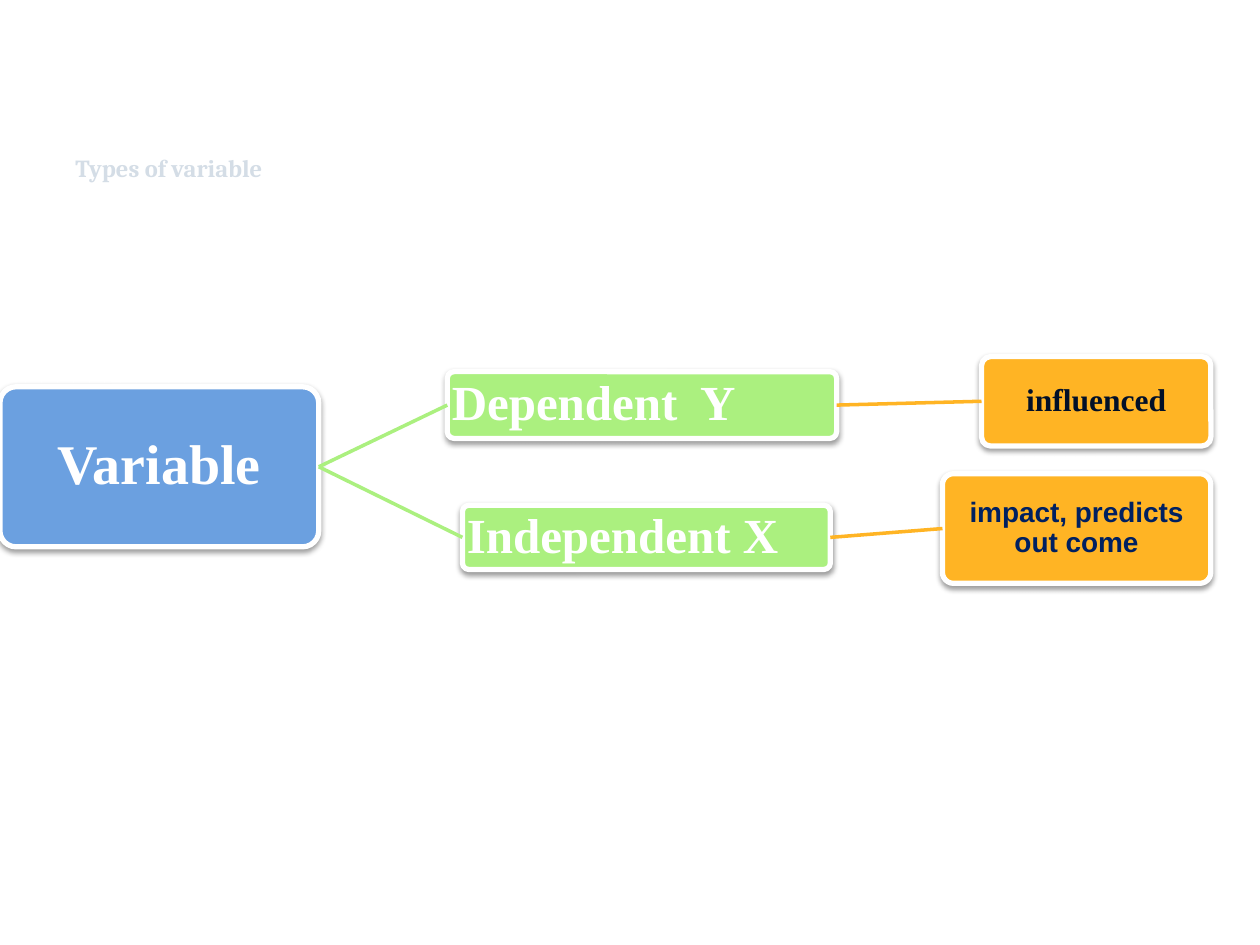
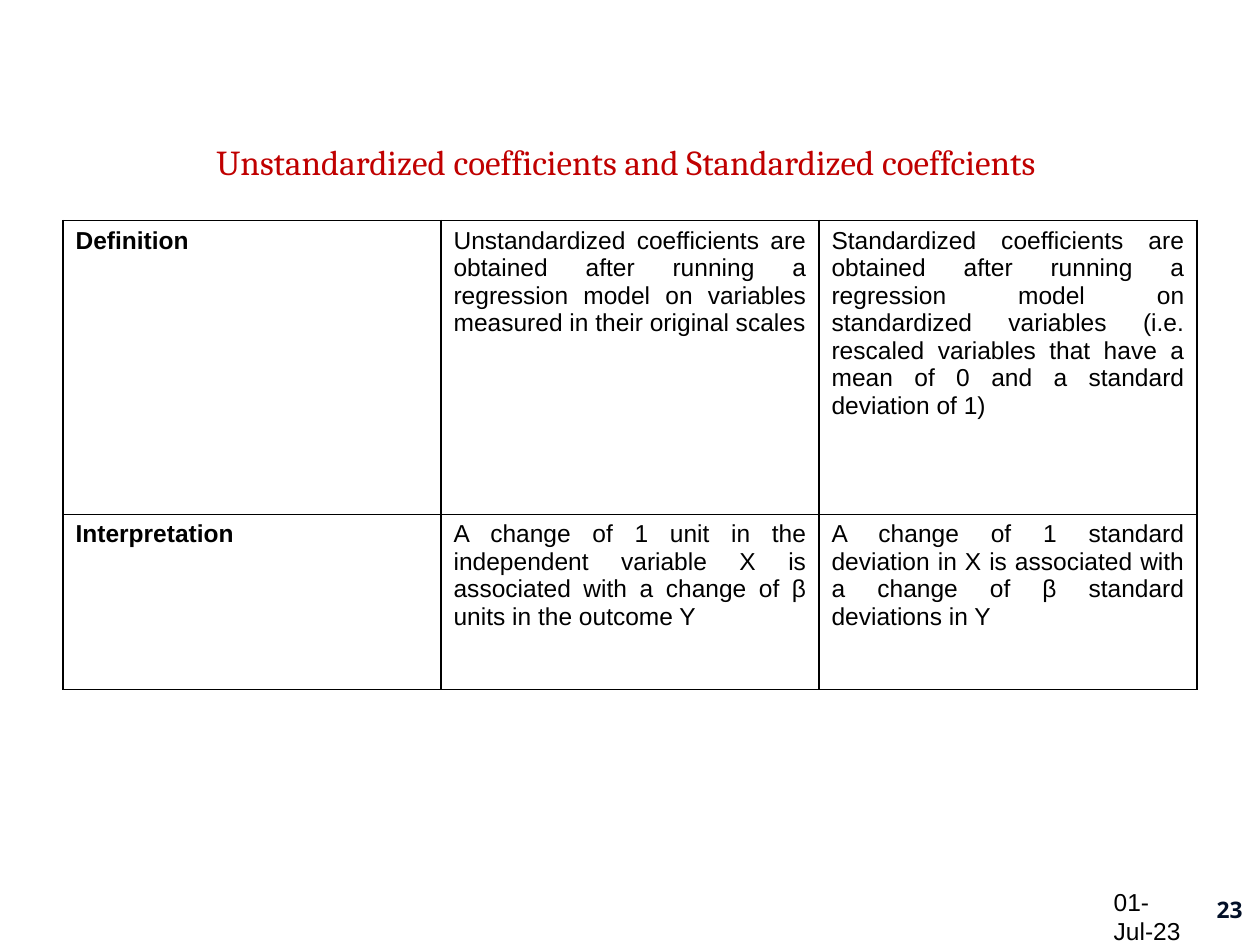
from lxml import etree
from pptx import Presentation
from pptx import util as u
from pptx.dml.color import RGBColor
from pptx.enum import shapes, text
from pptx.oxml import parse_xml
from pptx.oxml.ns import qn, nsdecls

WHITE = RGBColor(0xFF, 0xFF, 0xFF)
BLACK = RGBColor(0, 0, 0)
BLUE = RGBColor(0x6B, 0xA0, 0xE0)
GREEN = RGBColor(0xAB, 0xF0, 0x7F)
AMBER = RGBColor(0xFF, 0xB4, 0x24)
INK = RGBColor(0x02, 0x10, 0x28)
NAVY = RGBColor(0x00, 0x20, 0x60)
PALE = RGBColor(0xD4, 0xDD, 0xE6)
RED = RGBColor(0xC0, 0, 0)

ROMAN, SANS, HEAD = "Times New Roman", "Arial", "Cambria"
LEFT, MID = text.PP_ALIGN.LEFT, text.PP_ALIGN.CENTER
RIGHT, JUST = text.PP_ALIGN.RIGHT, text.PP_ALIGN.JUSTIFY
CENTRE = text.MSO_ANCHOR.MIDDLE

NODES = {
    "root": ("Variable", (0, 3.07, 2.53, 1.27), BLUE, ROMAN, 32, WHITE, MID),
    "dep": ("Dependent  Y", (3.55, 2.95, 3.09, 0.53), GREEN, ROMAN, 28, WHITE, LEFT),
    "infl": ("influenced", (7.79, 2.83, 1.82, 0.71), AMBER, ROMAN, 18, INK, MID),
    "ind": ("Independent X", (3.67, 4.01, 2.92, 0.51), GREEN, ROMAN, 28, WHITE, LEFT),
    "pred": ("impact, predicts out come", (7.48, 3.76, 2.13, 0.87), AMBER, SANS, 16, NAVY, MID),
}
LINKS = [("root", "dep"), ("dep", "infl"), ("root", "ind"), ("ind", "pred")]

ROWS = [
    (2.33, "Definition",
     "Unstandardized coefficients are obtained after running a regression model "
     "on variables measured in their original scales",
     "Standardized coefficients are obtained after running a regression model on "
     "standardized variables (i.e. rescaled variables that have a mean of 0 and a "
     "standard deviation of 1)"),
    (1.39, "Interpretation",
     "A change of 1 unit in the independent variable X is associated with a change "
     "of β units in the outcome Y",
     "A change of 1 standard deviation in X is associated with a change of β "
     "standard deviations in Y"),
]


def inches(at):
    return [u.Inches(v) for v in at]


def write(frame, words, font, size, color, bold=False, align=LEFT):
    para = frame.paragraphs[0]
    para.alignment = align
    run = para.add_run()
    run.text = words
    run.font.name = font
    run.font.size = u.Pt(size)
    run.font.bold = bold
    run.font.color.rgb = color
    return para


def pad(frame, side, top):
    frame.margin_left = frame.margin_right = u.Inches(side)
    frame.margin_top = frame.margin_bottom = u.Inches(top)


def label(slide, at, words, *style, anchor=text.MSO_ANCHOR.TOP, top=0.1):
    frame = slide.shapes.add_textbox(*inches(at)).text_frame
    frame.word_wrap = True
    frame.vertical_anchor = anchor
    pad(frame, 0.1, top)
    write(frame, words, *style)


def title(slide, words, *style):
    label(slide, (0.5, 0.3, 9, 1.25), words, HEAD, *style,
          anchor=text.MSO_ANCHOR.BOTTOM)


def shade(shape):
    shape.shadow.inherit = False
    glow = shape.element.spPr.find(qn("a:effectLst"))
    glow.append(parse_xml(
        f'<a:outerShdw {nsdecls("a")} blurRad="{u.Pt(3.1)}" dist="{u.Pt(1.6)}" '
        'dir="5400000" rotWithShape="0"><a:srgbClr val="000000">'
        '<a:alpha val="38000"/></a:srgbClr></a:outerShdw>'))


def node(slide, words, at, fill, font, size, color, align):
    box = slide.shapes.add_shape(shapes.MSO_SHAPE.ROUNDED_RECTANGLE, *inches(at))
    box.adjustments[0] = 0.1
    box.fill.solid()
    box.fill.fore_color.rgb = fill
    box.line.color.rgb = WHITE
    box.line.width = u.Pt(3)
    shade(box)
    frame = box.text_frame
    frame.word_wrap = True
    frame.vertical_anchor = CENTRE
    pad(frame, 0.02, 0.02)
    write(frame, words, font, size, color, True, align).line_spacing = 0.9
    return box


def link(slide, start, end, color):
    line = slide.shapes.add_connector(
        shapes.MSO_CONNECTOR.STRAIGHT,
        start.left + start.width, start.top + start.height // 2,
        end.left, end.top + end.height // 2)
    line.begin_connect(start, 3)
    line.end_connect(end, 1)
    line.line.color.rgb = color
    line.line.width = u.Pt(2)
    etree.SubElement(line.element.spPr, qn("a:effectLst"))


def edge(cell):
    props = cell._tc.get_or_add_tcPr()
    for side in ("lnL", "lnR", "lnT", "lnB"):
        props.append(parse_xml(
            f'<a:{side} {nsdecls("a")} w="{u.Pt(0.75)}"><a:solidFill>'
            f'<a:srgbClr val="{BLACK}"/></a:solidFill></a:{side}>'))
    cell.fill.background()


def types(slide):
    title(slide, "Types of variable", 14, PALE, True)
    boxes = {key: node(slide, *item) for key, item in NODES.items()}
    for start, end in LINKS:
        link(slide, boxes[start], boxes[end], NODES[end][2])


def scales(slide):
    title(slide, "Unstandardized coefficients and Standardized coeffcients ",
          20, RED, False, MID)
    tall = sum(row[0] for row in ROWS)
    grid = slide.shapes.add_table(
        len(ROWS), 3, *inches((0.5, 1.75, 9, tall))).table
    grid.first_row = grid.horz_banding = False
    for r, (high, *cells) in enumerate(ROWS):
        grid.rows[r].height = u.Inches(high)
        for c, words in enumerate(cells):
            cell = grid.cell(r, c)
            edge(cell)
            write(cell.text_frame, words, SANS, 14, BLACK, c == 0,
                  JUST if c else LEFT)
    label(slide, (8.74, 6.99, 0.81, 0.33), "01-Jul-23", SANS, 14, BLACK, top=0.05)
    label(slide, (9.36, 6.93, 0.6, 0.57), "23", "Open Sans", 13, INK, True, RIGHT,
          anchor=CENTRE)


def main():
    deck = Presentation()
    deck.slide_width, deck.slide_height = inches((10, 7.5))
    for build in (types, scales):
        build(deck.slides.add_slide(deck.slide_layouts[6]))
    deck.save("out.pptx")


if __name__ == "__main__":
    main()
